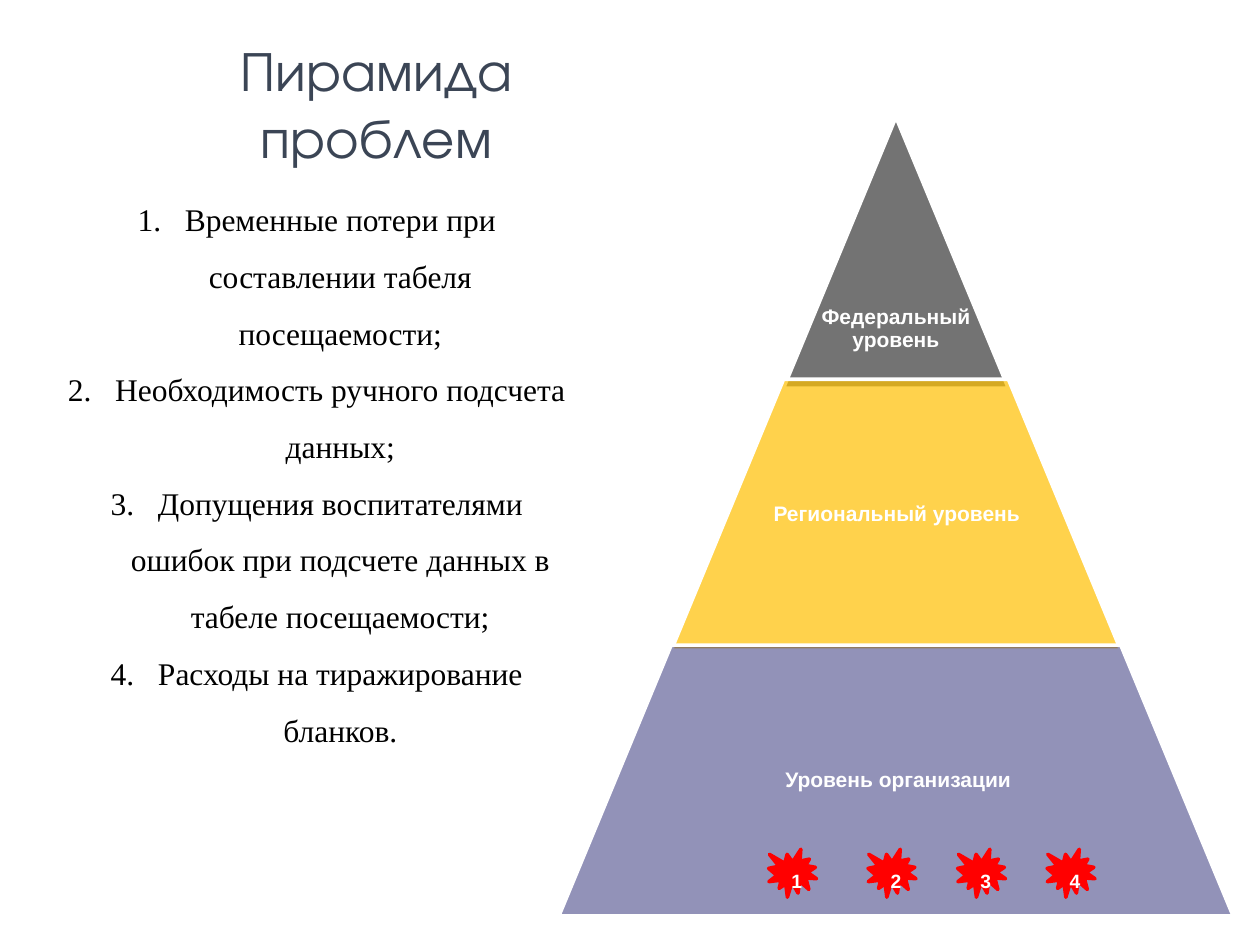
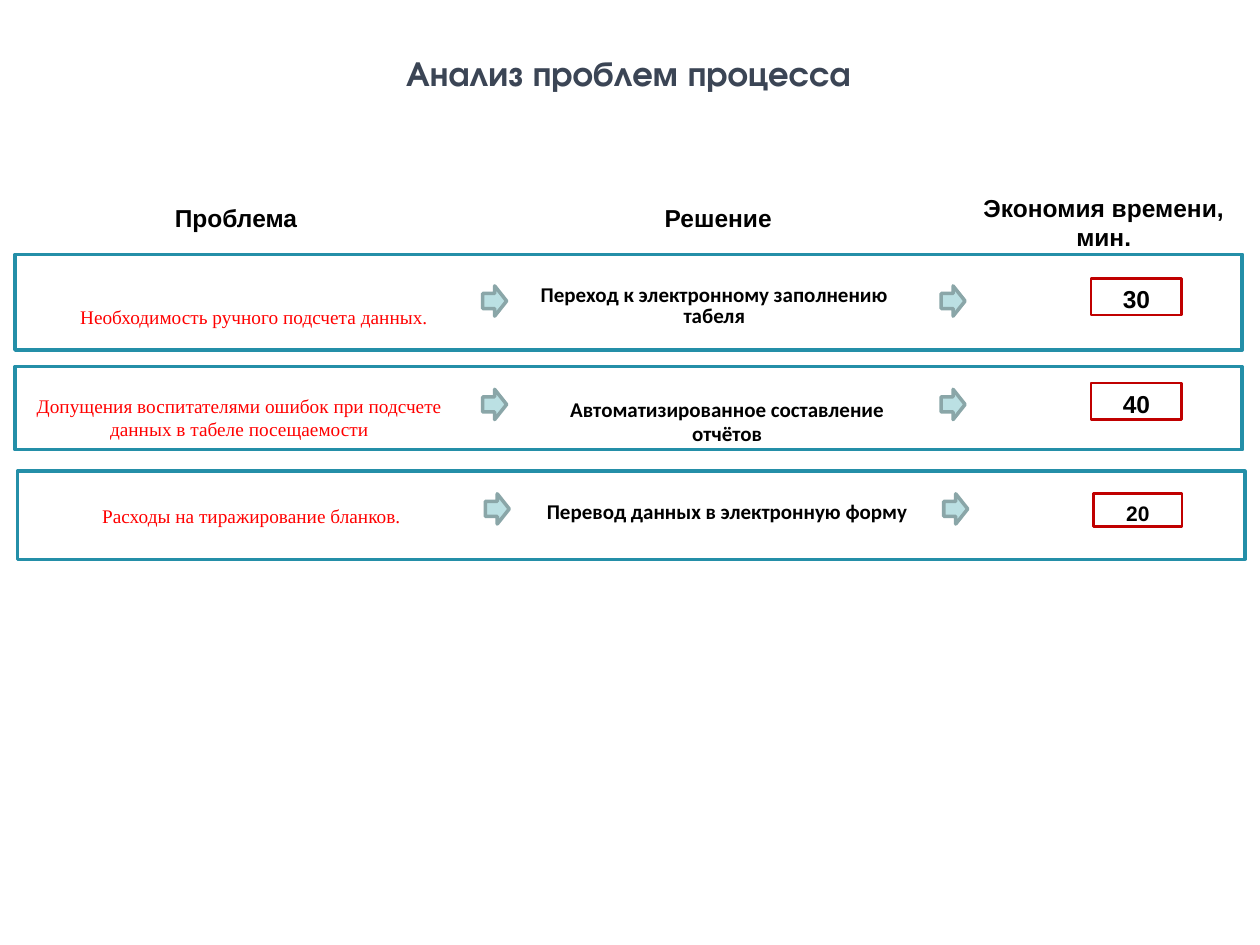
"""Build two slides: the pyramid of problems and the analysis of process problems."""
from dataclasses import dataclass
from typing import NamedTuple

from lxml.etree import SubElement
from pptx import Presentation
from pptx.dml.color import RGBColor
from pptx.enum.shapes import MSO_SHAPE as Shape
from pptx.enum.text import MSO_ANCHOR as Anchor, MSO_AUTO_SIZE as AutoSize, PP_ALIGN as Align
from pptx.oxml.ns import qn
from pptx.util import Pt


class Box(NamedTuple):
    left: float
    top: float
    width: float
    height: float


class Insets(NamedTuple):
    left: float = 7.2
    top: float = 3.6
    right: float = 7.2
    bottom: float = 3.6


@dataclass(frozen=True)
class Style:
    font: str
    size: float
    color: str
    bold: bool = False


@dataclass(frozen=True)
class Theme:
    title: Style = Style("TeX Gyre Adventor", 32, "3B4555")
    subtitle: Style = Style("TeX Gyre Adventor", 20, "3B4555", True)
    body: Style = Style("Times New Roman", 18, "000000")
    level: Style = Style("Arial", 12, "FFFFFF", True)
    burst: Style = Style("Arial", 11, "FFFFFF", True)
    header: Style = Style("Arial", 14, "000000", True)
    minor: Style = Style("Arial", 12, "000000", True)
    problem: Style = Style("Times New Roman", 11, "FF0000")
    solution: Style = Style("Calibri", 12, "000000", True)
    white: str = "FFFFFF"
    red: str = "FF0000"
    frame: str = "248FA8"
    badge: str = "C00000"
    arrow: str = "BBE0E3"
    arrow_line: str = "8AA6A8"


@dataclass(frozen=True)
class Level:
    text: str
    top: float
    color: str
    opacity: int
    label: Box


@dataclass(frozen=True)
class Label:
    text: str
    box: Box
    spacing: float = 1
    anchor: Anchor = Anchor.MIDDLE
    insets: Insets = Insets(7.2, 6.5, 7.2, 0.7)


@dataclass(frozen=True)
class Row:
    frame: Box
    arrow_top: float
    badge: Box
    minutes: str
    minutes_style: Style
    problem: Label
    solution: Label


THEME = Theme()
TIGHT = Insets(1.4, 1.4, 1.4, 1.4)
HEADER = Insets(7.2, 3.6, 7.2, 0.7)
LEVEL_STEP, LEVEL_HEIGHT, PYRAMID_CENTER = 128.4, 154.8, 512

LEVELS = [
    Level("Федеральный уровень", 67, "737373", 100, Box(462, 166, 100, 44)),
    Level("Региональный уровень", 216.7, "FFC000", 70, Box(429, 216.7, 167, 154.8)),
    Level("Уровень организации", 368.6, "262673", 50, Box(388, 368.6, 250.5, 154.8)),
]
PROBLEMS = [
    "Временные потери при составлении табеля посещаемости;",
    "Необходимость ручного подсчета данных;",
    "Допущения воспитателями ошибок при подсчете данных в табеле посещаемости;",
    "Расходы на тиражирование бланков.",
]
BURST_LEFTS = [439.2, 496, 547.2, 598.3]
HEADERS = [
    ("Проблема", Box(69, 112.3, 131.8, 21.6)),
    ("Решение", Box(347.8, 112.3, 125.3, 21.6)),
    ("Экономия времени, мин.", Box(541.4, 106.6, 178.6, 38.2)),
]
ROWS = [
    Row(Box(8.6, 145.4, 701.3, 54.7), 163.4, Box(623.5, 159.1, 51.8, 20.9), "30", THEME.header,
        Label("Необходимость ручного подсчета данных.", Box(20.2, 162, 249.8, 25.2), 1.5),
        Label("Переход к электронному заполнению табеля", Box(292.3, 157, 231.8, 31), 0.8)),
    Row(Box(8.6, 209.5, 701.3, 47.5), 222.5, Box(623.5, 218.9, 51.8, 20.9), "40", THEME.header,
        Label("Допущения воспитателями ошибок при подсчете данных в табеле посещаемости",
              Box(0, 218.9, 273.6, 33.8)),
        Label("Автоматизированное составление отчётов", Box(297.4, 224.6, 236.2, 20.9), 0.93,
              Anchor.TOP, Insets())),
    Row(Box(10.1, 269.3, 701.3, 50.4), 282.2, Box(625, 282.2, 50.4, 18.7), "20", THEME.minor,
        Label("Расходы на тиражирование бланков.", Box(14.4, 275.8, 258.5, 25.2), 1.5),
        Label("Перевод данных в электронную форму", Box(297.4, 281.5, 236.2, 21.6), 1,
              Anchor.TOP, Insets())),
]


def rgb(color: str) -> RGBColor:
    return RGBColor.from_string(color)


def place(sp, box: Box) -> None:
    sp.left, sp.top, sp.width, sp.height = map(Pt, box)


def format_text(tf, style: Style, spacing: float = 1, anchor: Anchor = Anchor.TOP,
                insets: Insets = Insets()) -> None:
    tf.word_wrap = True
    tf.auto_size = AutoSize.NONE
    tf.vertical_anchor = anchor
    tf.margin_left, tf.margin_top, tf.margin_right, tf.margin_bottom = map(Pt, insets)
    for p in tf.paragraphs:
        p.alignment = Align.CENTER
        p.line_spacing = spacing
        p.space_before = Pt(0)
        for r in p.runs:
            r.font.name = style.font
            r.font.size = Pt(style.size)
            r.font.bold = style.bold
            r.font.color.rgb = rgb(style.color)


def add_title(s, text: str, box: Box, style: Style) -> None:
    title = s.shapes.title
    place(title, box)
    title.text_frame.text = text
    format_text(title.text_frame, style)


def add_label(s, label: Label, style: Style) -> None:
    tf = s.shapes.add_textbox(*map(Pt, label.box)).text_frame
    tf.text = label.text
    format_text(tf, style, label.spacing, label.anchor, label.insets)


def add_shape(s, kind: Shape, box: Box, line: str, fill: str | None = None,
              line_width: float = 2, opacity: int = 100):
    sp = s.shapes.add_shape(kind, *map(Pt, box))
    sp.shadow.inherit = False
    sp.line.color.rgb = rgb(line)
    sp.line.width = Pt(line_width)
    if fill is None:
        sp.fill.background()
    else:
        sp.fill.solid()
        sp.fill.fore_color.rgb = rgb(fill)
        if opacity < 100:
            color = sp._element.spPr.find(qn("a:solidFill"))[0]
            SubElement(color, qn("a:alpha"), val=str(opacity * 1000))
    return sp


def add_numbered_list(s, items: list[str], box: Box) -> None:
    body = s.placeholders[1]
    place(body, box)
    tf = body.text_frame
    tf.text = "\n".join(items)
    for p in tf.paragraphs:
        pPr = p._p.get_or_add_pPr()
        pPr.set("marL", str(Pt(27)))
        pPr.set("indent", str(Pt(-27)))
        SubElement(pPr, qn("a:buFontTx"))
        SubElement(pPr, qn("a:buAutoNum"), type="arabicPeriod")
    format_text(tf, THEME.body, 1.5)


def add_level(s, number: int, level: Level) -> None:
    width = LEVEL_STEP * number
    box = Box(PYRAMID_CENTER - width / 2, level.top, width, LEVEL_HEIGHT)
    sp = add_shape(s, Shape.TRAPEZOID, box, THEME.white, level.color, opacity=level.opacity)
    sp.adjustments[0] = LEVEL_STEP / 2 / min(width, LEVEL_HEIGHT)
    add_label(s, Label(level.text, level.label, 0.9, insets=TIGHT), THEME.level)


def add_row(s, row: Row) -> None:
    badge = add_shape(s, Shape.RECTANGLE, row.badge, THEME.badge, line_width=1.5)
    badge.text_frame.text = row.minutes
    format_text(badge.text_frame, row.minutes_style, 0.8, Anchor.MIDDLE, row.problem.insets)
    add_shape(s, Shape.RECTANGLE, row.frame, THEME.frame)
    for offset in (267.2, 529.2):
        box = Box(row.frame.left + offset, row.arrow_top, 13.7, 17.3)
        add_shape(s, Shape.RIGHT_ARROW, box, THEME.arrow_line, THEME.arrow)
    add_label(s, row.problem, THEME.problem)
    add_label(s, row.solution, THEME.solution)


def build_pyramid(prs) -> None:
    s = prs.slides.add_slide(prs.slide_layouts[1])
    add_title(s, "Пирамида проблем", Box(62, 16.5, 306.5, 46), THEME.title)
    for number, level in enumerate(LEVELS, 1):
        add_level(s, number, level)
    add_numbered_list(s, PROBLEMS, Box(31, 100, 300, 425))
    for number, left in enumerate(BURST_LEFTS, 1):
        box = Box(left, 485.3, 27.4, 27.4)
        burst = add_shape(s, Shape.EXPLOSION1, box, THEME.red, THEME.red)
        burst.text_frame.text = str(number)
        format_text(burst.text_frame, THEME.burst)


def build_analysis(prs) -> None:
    s = prs.slides.add_slide(prs.slide_layouts[5])
    add_title(s, "Анализ проблем процесса", Box(17.3, 26, 684, 67), THEME.subtitle)
    for text, box in HEADERS:
        add_label(s, Label(text, box, 1, Anchor.TOP, HEADER), THEME.header)
    for row in ROWS:
        add_row(s, row)


def main() -> None:
    prs = Presentation()
    prs.slide_width, prs.slide_height = Pt(720), Pt(540)
    build_pyramid(prs)
    build_analysis(prs)
    prs.save("out.pptx")


if __name__ == "__main__":
    main()
